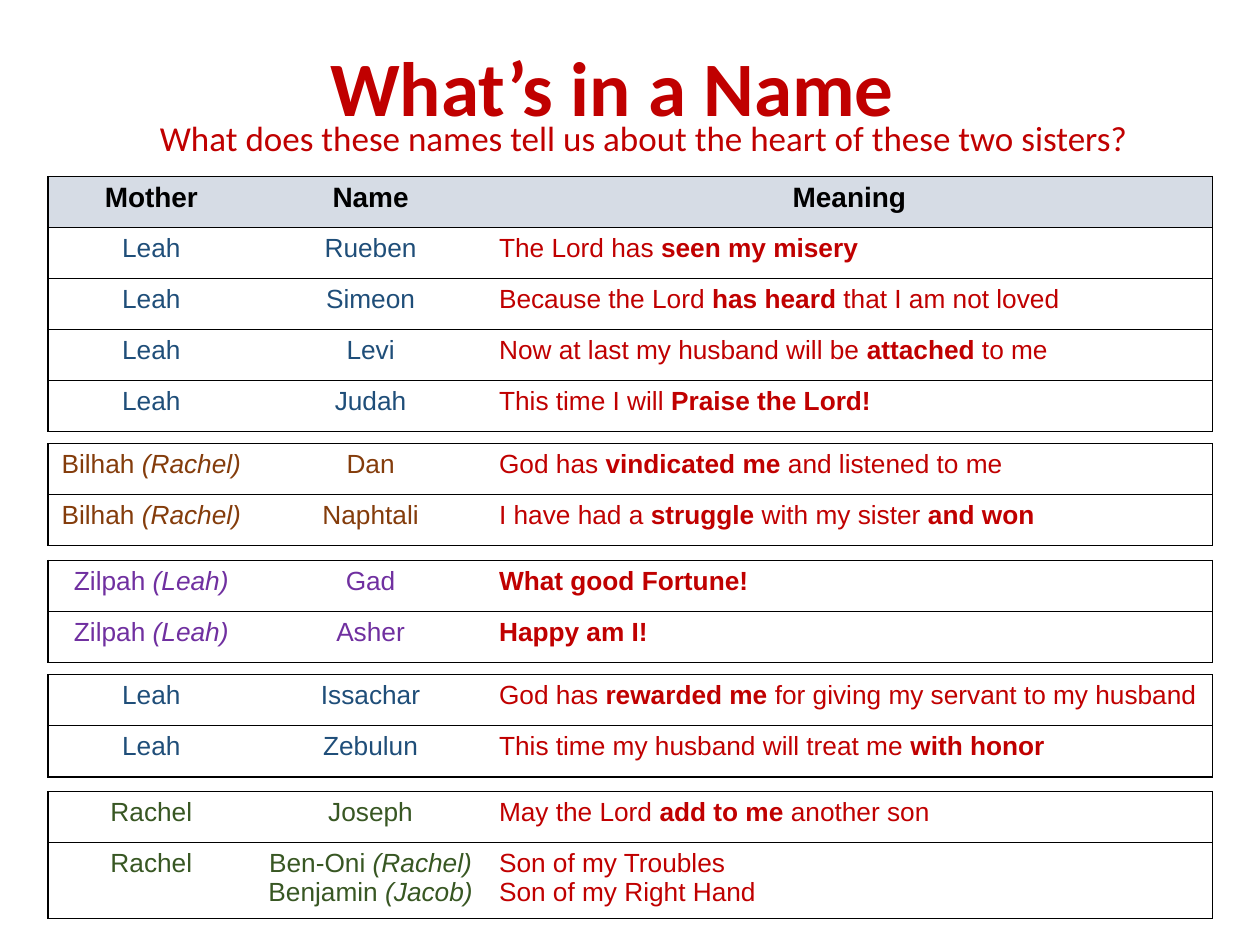
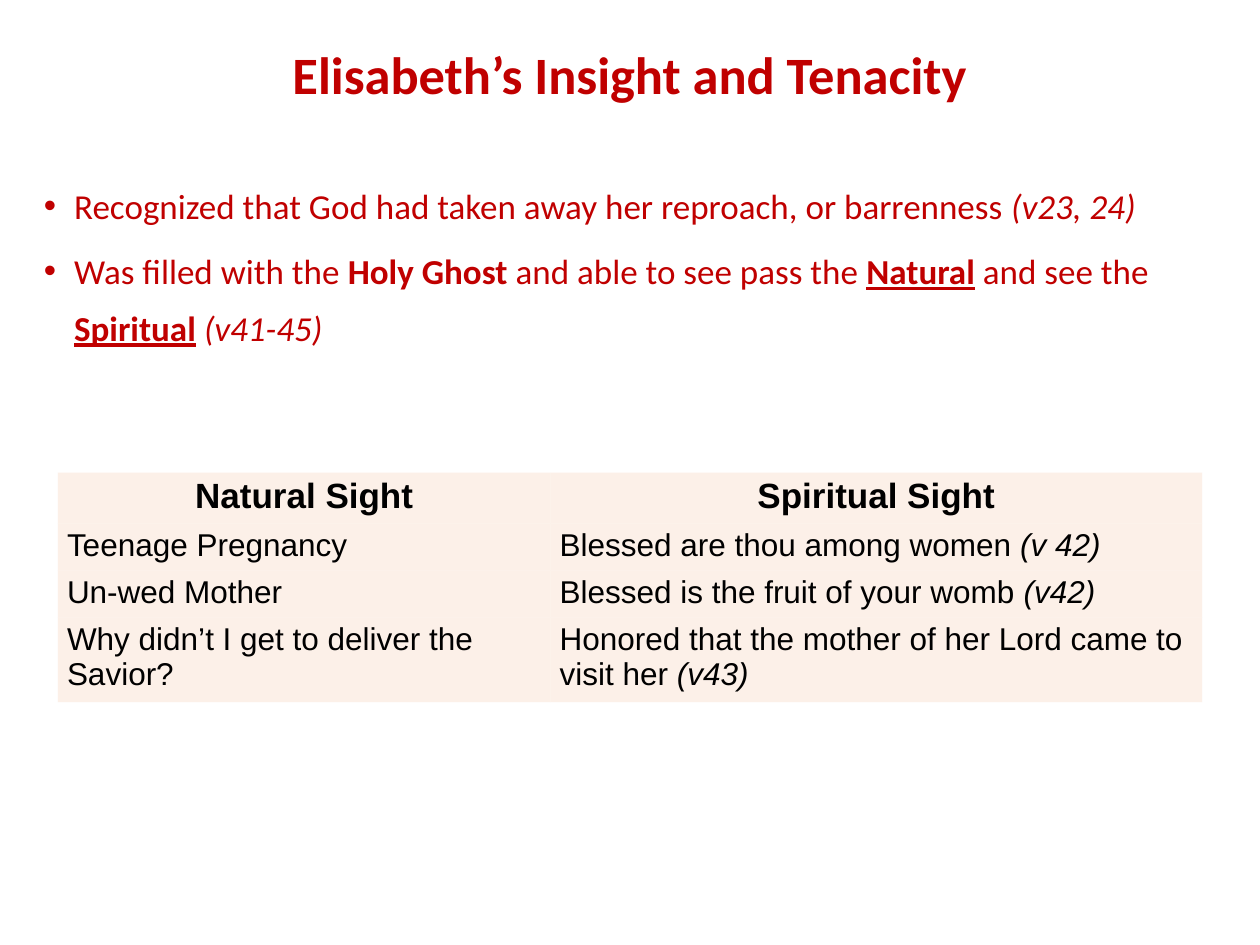
from lxml.etree import SubElement as Sub
from pptx import Presentation
from pptx.dml.color import RGBColor as Rgb
from pptx.enum.text import MSO_ANCHOR as Anchor, PP_ALIGN as Align
from pptx.oxml.ns import qn
from pptx.util import Pt

# Colours and fonts
RED = Rgb(0xC0, 0x00, 0x00)
BLACK = Rgb(0x00, 0x00, 0x00)
WHITE = Rgb(0xFF, 0xFF, 0xFF)
GREY = Rgb(0xD6, 0xDC, 0xE5)
PEACH = Rgb(0xFB, 0xE4, 0xD4)
BLUE = Rgb(0x1F, 0x4E, 0x79)
BROWN = Rgb(0x84, 0x3C, 0x0B)
PURPLE = Rgb(0x70, 0x30, 0xA0)
GREEN = Rgb(0x38, 0x57, 0x23)
HEAD, BODY = "Calibri", "Arial"

# Name tables: top, colour of the mother, rows.
# "|" parts runs; "b:", "i:" and "u:" mark bold, italic and bold underlined.
TITLES = ("Mother", "Name", "Meaning")
GROUPS = [
    (100.8, BLUE, [
        ("Leah", "Rueben", "The Lord has |b:seen my misery"),
        ("Leah", "Simeon",
         "Because the Lord |b:has heard |that I am not loved"),
        ("Leah", "Levi",
         "Now at last my husband will be |b:attached| to me"),
        ("Leah", "Judah", "This time I will |b:Praise the Lord!")]),
    (253.5, BROWN, [
        ("Bilhah |i:(Rachel)", "Dan",
         "God has |b:vindicated me |and listened to me"),
        ("Bilhah |i:(Rachel)", "Naphtali",
         "I have had a |b:struggle| with my sister |b:and won")]),
    (320.3, PURPLE, [
        ("Zilpah |i:(Leah)", "Gad", "b:What good Fortune!"),
        ("Zilpah |i:(Leah)", "Asher", "b:Happy am I!")]),
    (385.6, BLUE, [
        ("Leah", "Issachar",
         "God has |b:rewarded me |for giving my servant to my husband"),
        ("Leah", "Zebulun",
         "This time my husband will treat me |b:with honor")]),
    (452.3, GREEN, [
        ("Rachel", "Joseph", "May the Lord |b:add to me |another son"),
        ("Rachel", "Ben-Oni |i:(Rachel)\nBenjamin |i:(Jacob)",
         "Son of my Troubles\nSon of my Right Hand")]),
]
SIGHTS = [
    ("Natural Sight", "Spiritual Sight"),
    ("Teenage Pregnancy", "Blessed are thou among women |i:(v 42)"),
    ("Un-wed Mother", "Blessed is the fruit of your womb |i:(v42)"),
    ("Why didn’t I get to deliver the Savior?",
     "Honored that the mother of her Lord came to visit her |i:(v43)"),
]
POINTS = [
    "Recognized that God had taken away her reproach, or barrenness "
    "|i:(v23, 24)",
    "Was filled with the |b:Holy Ghost |and able to see pass the "
    "|u:Natural| and see the |u:Spiritual| |i:(v41-45)",
]


def write(para, text, size, color, face, bold=False, align=None):
    """Fill a paragraph with marked runs."""
    font = para.font
    font.size, font.name, font.bold = Pt(size), face, bold
    font.color.rgb = color
    para.alignment = align
    for part in text.split("|"):
        mark = part[:2]
        run = para.add_run()
        run.text = part[2:] if mark in ("b:", "i:", "u:") else part
        if mark in ("b:", "u:"):
            run.font.bold = True
        if mark == "u:":
            run.font.underline = True
        if mark == "i:":
            run.font.italic = True


def indent(para, left, first=0):
    props = para._p.get_or_add_pPr()
    props.set("marL", str(Pt(left)))
    props.set("indent", str(Pt(first)))
    return props


def bullet(para):
    props = indent(para, 20.9, -17.3)
    tint = Sub(Sub(props, qn("a:buClr")), qn("a:srgbClr"))
    tint.set("val", str(RED))
    Sub(props, qn("a:buFont")).set("typeface", BODY)
    Sub(props, qn("a:buChar")).set("char", "•")


def add_box(slide, left, top, width, height, inset, anchor=Anchor.TOP):
    box = slide.shapes.add_textbox(Pt(left), Pt(top), Pt(width), Pt(height))
    frame = box.text_frame
    frame.word_wrap = True
    frame.vertical_anchor = anchor
    frame.margin_left = frame.margin_right = Pt(7.2)
    frame.margin_top = frame.margin_bottom = Pt(inset)
    return frame


def add_line(slide, at, text, size, bold=False, anchor=Anchor.TOP):
    """One centred heading line in a box of its own."""
    para = add_box(slide, *at, 7.2, anchor).paragraphs[0]
    indent(para, 6.5)
    para.line_spacing = 1.5
    write(para, text, size, RED, HEAD, bold, Align.CENTER)


def add_grid(slide, left, top, widths, heights):
    """A plain table with the style's header and bands switched off."""
    table = slide.shapes.add_table(
        len(heights), len(widths), Pt(left), Pt(top),
        Pt(sum(widths)), Pt(sum(heights))).table
    table.first_row = table.horz_banding = False
    for col, width in zip(table.columns, widths):
        col.width = Pt(width)
    for row, height in zip(table.rows, heights):
        row.height = Pt(height)
    return table


def paint(cell, fill, sides="", alpha=None):
    """Rule the named sides, clear the others, then fill."""
    props = cell._tc.get_or_add_tcPr()
    for side in "LRTB":
        line = Sub(props, qn("a:ln" + side))
        line.set("w", str(Pt(0.75)))
        if side in sides:
            ink = Sub(Sub(line, qn("a:solidFill")), qn("a:srgbClr"))
            ink.set("val", str(BLACK))
        else:
            Sub(line, qn("a:noFill"))
    cell.fill.solid()
    cell.fill.fore_color.rgb = fill
    if alpha:
        tint = props.find(qn("a:solidFill"))[0]
        Sub(tint, qn("a:alpha")).set("val", str(alpha * 1000))


def fill_cell(cell, text, *style):
    frame = cell.text_frame
    for i, line in enumerate(text.split("\n")):
        para = frame.add_paragraph() if i else frame.paragraphs[0]
        write(para, line, *style)


def add_names(slide, top, color, rows, head=None):
    full = [head] + rows if head else rows
    table = add_grid(slide, 27.4, top, (118.1, 132.5, 414.7),
                     [29.2] * len(full))
    for r, row in enumerate(full):
        titled = row is head
        for c, text in enumerate(row):
            cell = table.cell(r, c)
            paint(cell, GREY if titled else WHITE, ("LTB", "TB", "RTB")[c])
            align = Align.CENTER if titled or c < 2 else Align.LEFT
            if titled:
                fill_cell(cell, text, 16, BLACK, BODY, True, align)
            else:
                ink = color if c < 2 else RED
                fill_cell(cell, text, 15, ink, BODY, False, align)


def add_sights(slide):
    table = add_grid(slide, 33.1, 270, (281.5, 372.3), (23, 19.5, 19.5, 19.5))
    for r, row in enumerate(SIGHTS):
        style = ((18, BLACK, BODY, False, Align.LEFT) if r else
                 (20, BLACK, BODY, True, Align.CENTER))
        for c, text in enumerate(row):
            cell = table.cell(r, c)
            cell.margin_left = cell.margin_right = Pt(5.2)
            cell.margin_top = cell.margin_bottom = Pt(2.6)
            paint(cell, PEACH, alpha=52)
            fill_cell(cell, text, *style)


def add_points(slide):
    """Heading and bullets in one box."""
    frame = add_box(slide, 14.4, 7.9, 691.2, 465.8, 3.6)
    head = frame.paragraphs[0]
    head.line_spacing = 1.35
    write(head, "Elisabeth’s Insight and Tenacity", 30, RED, HEAD, True,
          Align.CENTER)
    for text, gap in zip(POINTS, (37, 5)):
        para = frame.add_paragraph()
        bullet(para)
        para.line_spacing = 1.35
        para.space_before = Pt(gap)
        write(para, text, 20, RED, HEAD)


def main():
    deck = Presentation()
    deck.slide_width, deck.slide_height = Pt(720), Pt(540)
    blank = deck.slide_layouts[6]

    # Slide 1: names and meanings
    slide = deck.slides.add_slide(blank)
    add_line(slide, (3.6, 3.6, 686.2, 64.1), "What’s in a Name", 44, True,
             Anchor.MIDDLE)
    add_line(slide, (30.2, 47.5, 668.9, 39.6),
             "What does these names tell us about the heart of these "
             "two sisters?", 20)
    for i, group in enumerate(GROUPS):
        add_names(slide, *group, head=None if i else TITLES)

    # Slide 2: two kinds of sight
    slide = deck.slides.add_slide(blank)
    add_points(slide)
    add_sights(slide)

    deck.save("out.pptx")


if __name__ == "__main__":
    main()
